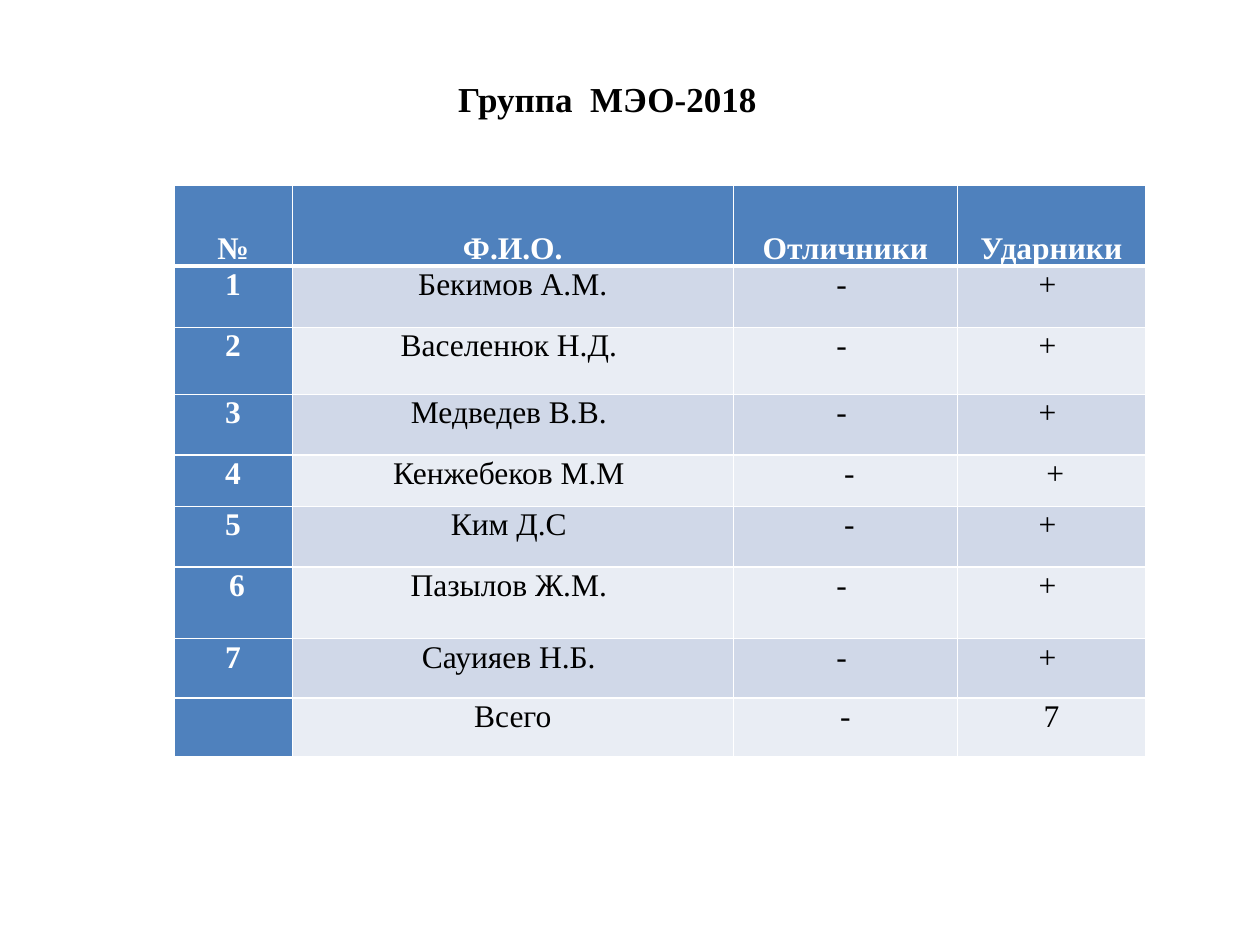
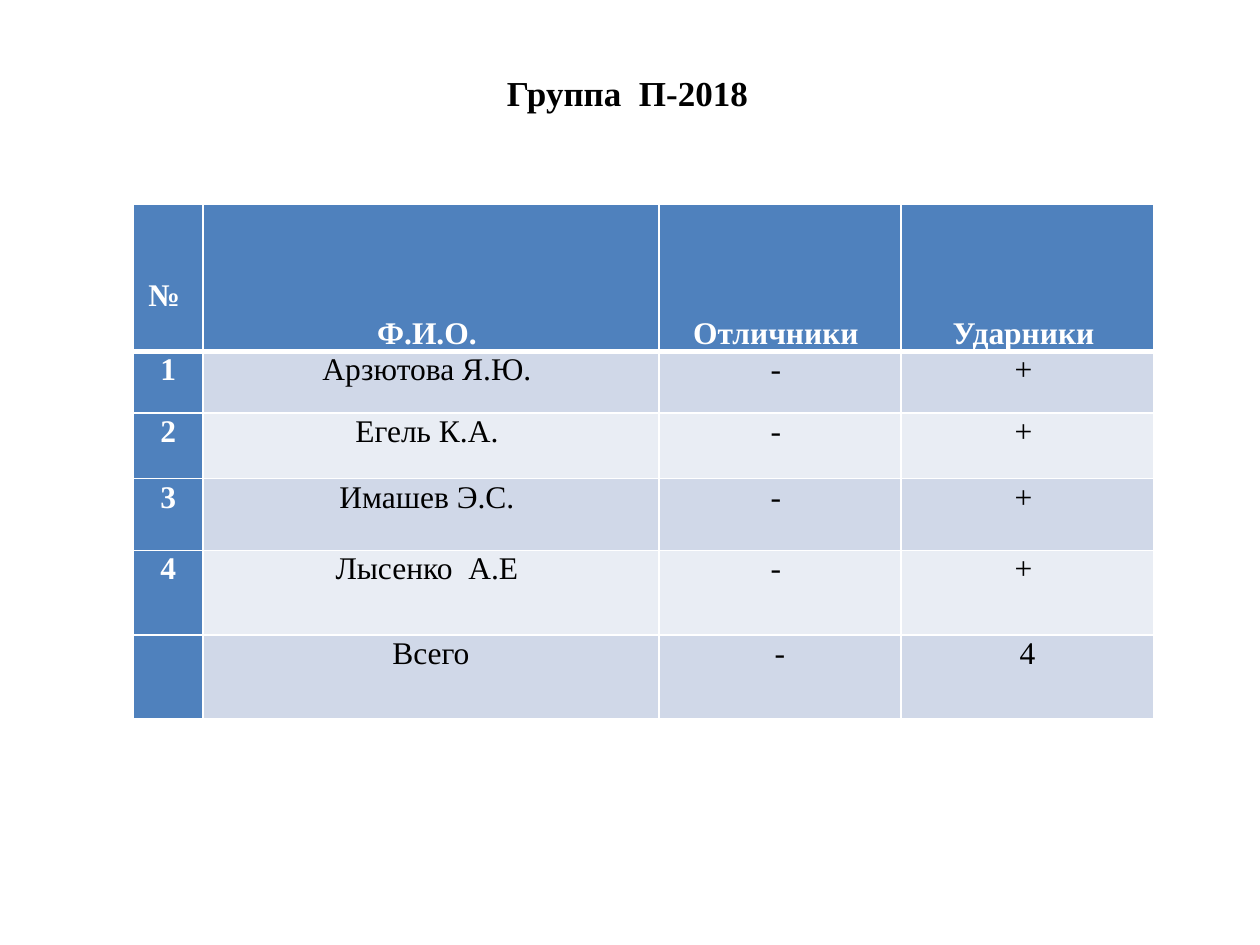
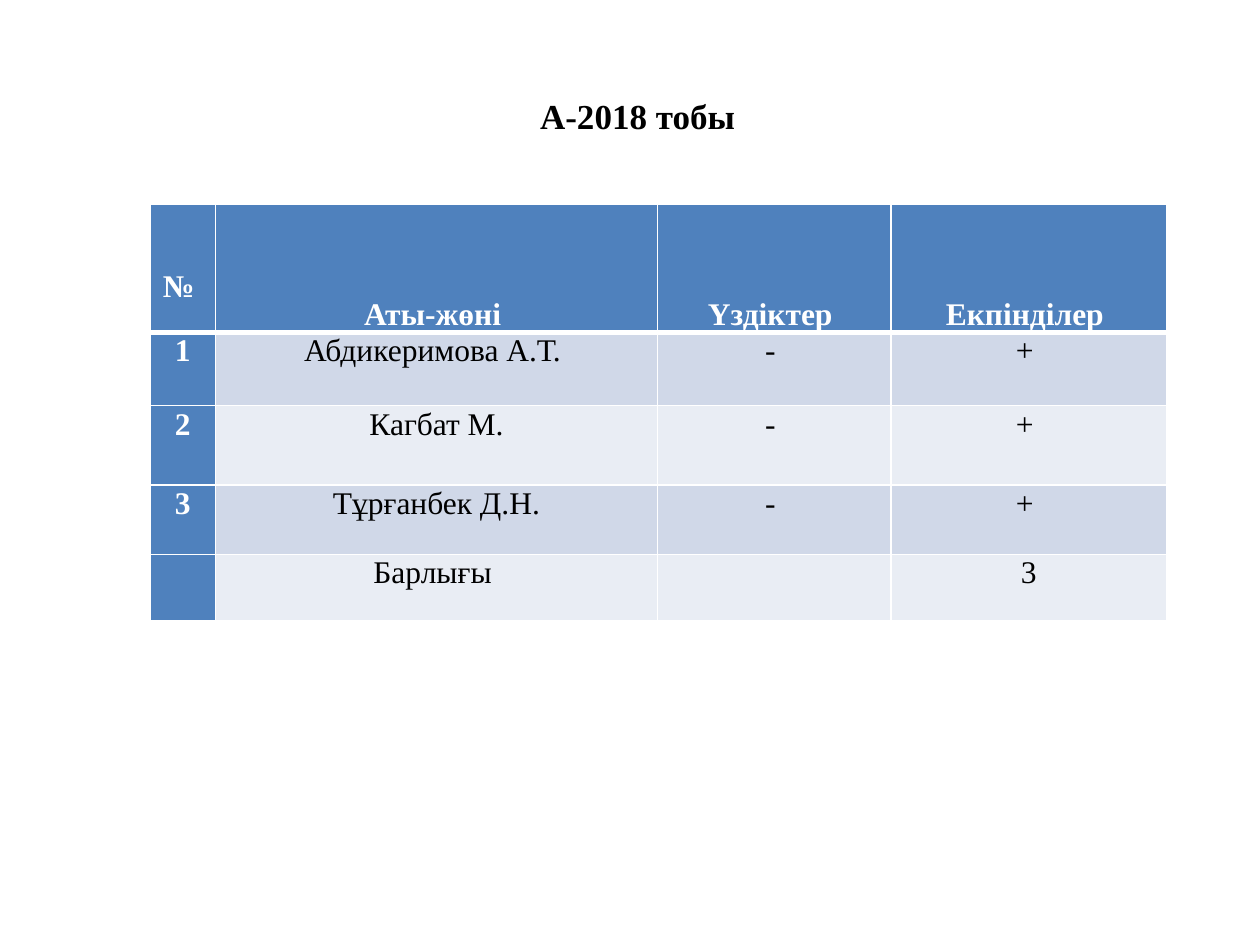
from dataclasses import dataclass

import pptx
import pptx.dml.color
import pptx.enum.text
import pptx.oxml.ns
import pptx.util
from lxml import etree

Inches = pptx.util.Inches
Pt = pptx.util.Pt
ANCHOR = pptx.enum.text.MSO_ANCHOR
FONT = "Times New Roman"
COLORS = {
    "header": "4F81BD",
    "odd": "D0D8E8",
    "even": "E9EDF4",
    "white": "FFFFFF",
    "black": "000000",
}


@dataclass
class Member:
    name: str
    excellent: str = "- "
    good: str = "+ "
    number: str = ""


@dataclass
class Group:
    title: str
    title_box: tuple[float, float, float, float]
    table_at: tuple[float, float]
    columns: list[float]
    rows: list[float]
    headings: list[str]
    members: list[Member]
    total: list[str]
    number_drop: float = 0


GROUPS = [
    Group(
        "Группа  МЭО-2018",
        (0.51, 0.29, 8.62, 0.99),
        (1.38, 1.47),
        [0.94, 3.5, 1.78, 1.49],
        [0.64, 0.49, 0.53, 0.48, 0.41, 0.48, 0.57, 0.47, 0.47],
        ["№", "Ф.И.О.", "Отличники", "Ударники"],
        [
            Member("Бекимов А.М."),
            Member("Васеленюк Н.Д. "),
            Member("Медведев В.В. "),
            Member("Кенжебеков М.М ", " -", " +"),
            Member("Ким Д.С ", " -"),
            Member("Пазылов Ж.М. ", number=" 6"),
            Member("Сауияев Н.Б. "),
        ],
        ["", "Всего", "-", "7"],
    ),
    Group(
        "Группа  П-2018",
        (0.67, 0.01, 8.62, 1.45),
        (1.06, 1.62),
        [0.55, 3.62, 1.92, 2.01],
        [1.17, 0.49, 0.52, 0.57, 0.67, 0.67],
        ["№ ", "Ф.И.О. ", "Отличники ", "Ударники "],
        [
            Member("Арзютова Я.Ю. "),
            Member("Егель К.А. "),
            Member("Имашев Э.С. "),
            Member("Лысенко  А.Е "),
        ],
        ["", "Всего", "-", "4"],
        0.29,
    ),
    Group(
        "А-2018 тобы",
        (0.75, 0.44, 8.62, 0.96),
        (1.19, 1.62),
        [0.52, 3.51, 1.85, 2.19],
        [1.02, 0.58, 0.63, 0.55, 0.53],
        ["№ ", "Аты-жөні ", "Үздіктер ", "Екпінділер "],
        [
            Member("Абдикеримова А.Т. "),
            Member("Кагбат М."),
            Member("Тұрғанбек Д.Н."),
        ],
        ["", "Барлығы ", "", "3"],
        0.29,
    ),
]


def rgb(name: str) -> pptx.dml.color.RGBColor:
    return pptx.dml.color.RGBColor.from_string(COLORS[name])


def write(tf, text: str, *, size: float = 18, color: str = "black", bold: bool = False) -> None:
    p = tf.paragraphs[0]
    p.alignment = pptx.enum.text.PP_ALIGN.CENTER
    if not text:
        return
    r = p.add_run()
    r.text = text
    r.font.name = FONT
    r.font.size = Pt(size)
    r.font.bold = bold
    r.font.color.rgb = rgb(color)


def set_borders(cell, top: float, bottom: float) -> None:
    qn = pptx.oxml.ns.qn
    tcPr = cell._tc.get_or_add_tcPr()
    for side, width in (("L", 1), ("R", 1), ("T", top), ("B", bottom)):
        ln = etree.SubElement(tcPr, qn(f"a:ln{side}"), w=str(Pt(width)))
        fill = etree.SubElement(ln, qn("a:solidFill"))
        etree.SubElement(fill, qn("a:srgbClr"), val=COLORS["white"])


def add_title(s, group: Group) -> None:
    sp = s.shapes.add_textbox(*map(Inches, group.title_box))
    tf = sp.text_frame
    tf.word_wrap = True
    tf.vertical_anchor = ANCHOR.MIDDLE
    write(tf, group.title, size=20, bold=True)


def fill_cell(cell, text: str, row: int, column: int) -> None:
    accent = row == 0 or column == 0
    set_borders(cell, 3 if row == 1 else 1, 3 if row == 0 else 1)
    cell.fill.solid()
    cell.fill.fore_color.rgb = rgb("header" if accent else "odd" if row % 2 else "even")
    cell.margin_left = cell.margin_right = cell.margin_top = Inches(0.01)
    cell.margin_bottom = 0
    cell.vertical_anchor = ANCHOR.BOTTOM if row == 0 else ANCHOR.TOP
    write(cell.text_frame, text, color="white" if accent else "black", bold=accent)


def add_roster(s, group: Group) -> None:
    data = [group.headings]
    for i, m in enumerate(group.members, 1):
        data.append([m.number or str(i), m.name, m.excellent, m.good])
    data.append(group.total)
    left, top = group.table_at
    table = s.shapes.add_table(
        len(data), len(group.columns), Inches(left), Inches(top),
        Inches(sum(group.columns)), Inches(sum(group.rows)),
    ).table
    for column, width in zip(table.columns, group.columns):
        column.width = Inches(width)
    for row, height in zip(table.rows, group.rows):
        row.height = Inches(height)
    for i, texts in enumerate(data):
        for j, text in enumerate(texts):
            fill_cell(table.cell(i, j), text, i, j)
    if group.number_drop:
        number = table.cell(0, 0)
        number.vertical_anchor = ANCHOR.MIDDLE
        number.margin_top = Inches(group.number_drop)


def main() -> None:
    prs = pptx.Presentation()
    prs.slide_width = Inches(10)
    prs.slide_height = Inches(7.5)
    for group in GROUPS:
        s = prs.slides.add_slide(prs.slide_layouts[6])
        add_title(s, group)
        add_roster(s, group)
    prs.save("out.pptx")


if __name__ == "__main__":
    main()
